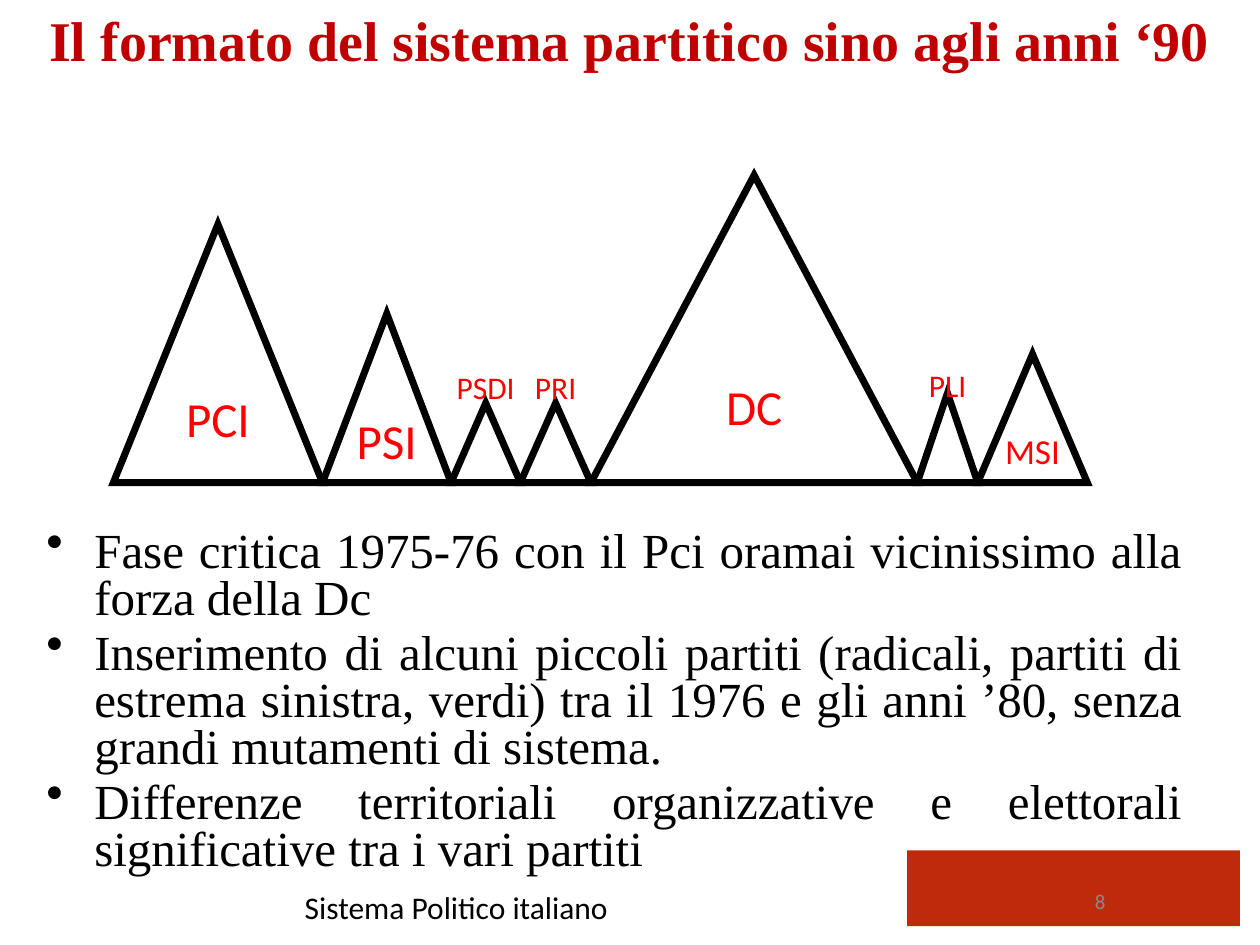
from dataclasses import dataclass

from lxml.etree import SubElement
from pptx import Presentation
from pptx.dml.color import RGBColor
from pptx.enum.shapes import MSO_SHAPE as Shape
from pptx.enum.text import MSO_ANCHOR as Anchor, PP_ALIGN as Align
from pptx.oxml.ns import qn
from pptx.util import Inches, Pt


@dataclass(frozen=True)
class Theme:
    serif: str = "Times New Roman"
    sans: str = "Calibri"
    black: str = "000000"
    title_red: str = "C00000"
    label_red: str = "FF0000"
    band_red: str = "BD2B0B"
    grey: str = "898989"
    title_size: int = 32
    large: int = 28
    medium: int = 20
    small: int = 18
    number_size: int = 12
    outline: int = 4


THEME = Theme()
BASELINE = 3.83
FIRST_LEFT = 0.9
LABEL_LIFT = 0.6
LABEL_WIDTH = 0.9
LABEL_HEIGHT = 0.4

# name, width, height, label size, label above its triangle
PARTIES = [
    ("PCI", 1.66, 2.05, THEME.large, False),
    ("PSI", 1.02, 1.34, THEME.large, False),
    ("PSDI", 0.55, 0.63, THEME.small, True),
    ("PRI", 0.56, 0.63, THEME.small, True),
    ("DC", 2.59, 2.44, THEME.large, False),
    ("PLI", 0.48, 0.71, THEME.small, True),
    ("MSI", 0.87, 1.02, THEME.medium, False),
]
POINTS = [
    "Fase critica 1975-76 con il Pci oramai vicinissimo alla forza della Dc",
    "Inserimento di alcuni piccoli partiti (radicali, partiti di estrema "
    "sinistra, verdi) tra il 1976 e gli anni ’80, senza grandi mutamenti di sistema.",
    "Differenze territoriali organizzative e elettorali significative tra i vari partiti",
]


def set_all(target, values):
    for name, value in values.items():
        setattr(target, name, value)


def write(para, text, font, size, color, bold=False):
    span = para.add_run()
    span.text = text
    set_all(span.font, {"name": font, "size": Pt(size), "bold": bold})
    span.font.color.rgb = RGBColor.from_string(color)


def add_box(page, left, top, width, height, anchor=Anchor.TOP):
    """Add an empty text box and return its text frame."""
    box = page.shapes.add_textbox(*map(Inches, (left, top, width, height)))
    set_all(box.text_frame, {"word_wrap": True, "vertical_anchor": anchor})
    return box.text_frame


def add_bullet(para):
    props = para._p.get_or_add_pPr()
    props.set("marL", str(Inches(0.38)))
    props.set("indent", str(-Inches(0.38)))
    SubElement(props, qn("a:buChar"), char="•")


def add_band(page):
    band = page.shapes.add_shape(Shape.RECTANGLE, *map(Inches, (7.2, 6.75, 2.64, 0.6)))
    band.shadow.inherit = False
    band.fill.solid()
    band.fill.fore_color.rgb = RGBColor.from_string(THEME.band_red)
    band.line.fill.background()


def add_title(page, text):
    frame = add_box(page, 0, 0, 10, 0.71)
    frame.margin_top = Inches(0.04)
    para = frame.paragraphs[0]
    para.alignment = Align.CENTER
    write(para, text, THEME.serif, THEME.title_size, THEME.title_red, bold=True)


def add_points(page, points):
    frame = add_box(page, 0.27, 4.14, 9.21, 2.52)
    frame.margin_top = Inches(0.07)
    for index, text in enumerate(points):
        para = frame.add_paragraph() if index else frame.paragraphs[0]
        set_all(para, {"alignment": Align.JUSTIFY, "line_spacing": 0.8,
                       "space_before": Pt(4.5 if index else 0)})
        add_bullet(para)
        write(para, text, THEME.serif, THEME.large, THEME.black)


def add_party(page, left, name, width, height, size, above):
    triangle = page.shapes.add_shape(
        Shape.ISOSCELES_TRIANGLE, *map(Inches, (left, BASELINE - height, width, height)))
    triangle.shadow.inherit = False
    triangle.fill.background()
    triangle.line.color.rgb = RGBColor.from_string(THEME.black)
    triangle.line.width = Pt(THEME.outline)
    SubElement(triangle.line._get_or_add_ln(), qn("a:miter"), lim="800000")
    if above:
        middle = BASELINE - height / 4 - LABEL_LIFT
        frame = add_box(page, left + (width - LABEL_WIDTH) / 2, middle - LABEL_HEIGHT / 2,
                        LABEL_WIDTH, LABEL_HEIGHT, Anchor.MIDDLE)
    else:
        frame = triangle.text_frame
        set_all(frame, {"word_wrap": False, "vertical_anchor": Anchor.MIDDLE})
    para = frame.paragraphs[0]
    para.alignment = Align.CENTER
    write(para, name, THEME.sans, size, THEME.label_red)


def add_footer(page, text, left, width, size, color):
    frame = add_box(page, left, 7, width, 0.5)
    write(frame.paragraphs[0], text, THEME.sans, size, color)


def main():
    deck = Presentation()
    set_all(deck, {"slide_width": Inches(10), "slide_height": Inches(7.5)})
    page = deck.slides.add_slide(deck.slide_layouts[6])
    add_band(page)
    add_footer(page, "Sistema Politico italiano", 2.32, 4.65, THEME.small, THEME.black)
    add_footer(page, "8", 8.59, 1.41, THEME.number_size, THEME.grey)
    add_title(page, "Il formato del sistema partitico sino agli anni ‘90")
    add_points(page, POINTS)
    left = FIRST_LEFT
    for party in PARTIES:
        add_party(page, left, *party)
        left += party[1]
    deck.save("out.pptx")


if __name__ == "__main__":
    main()
